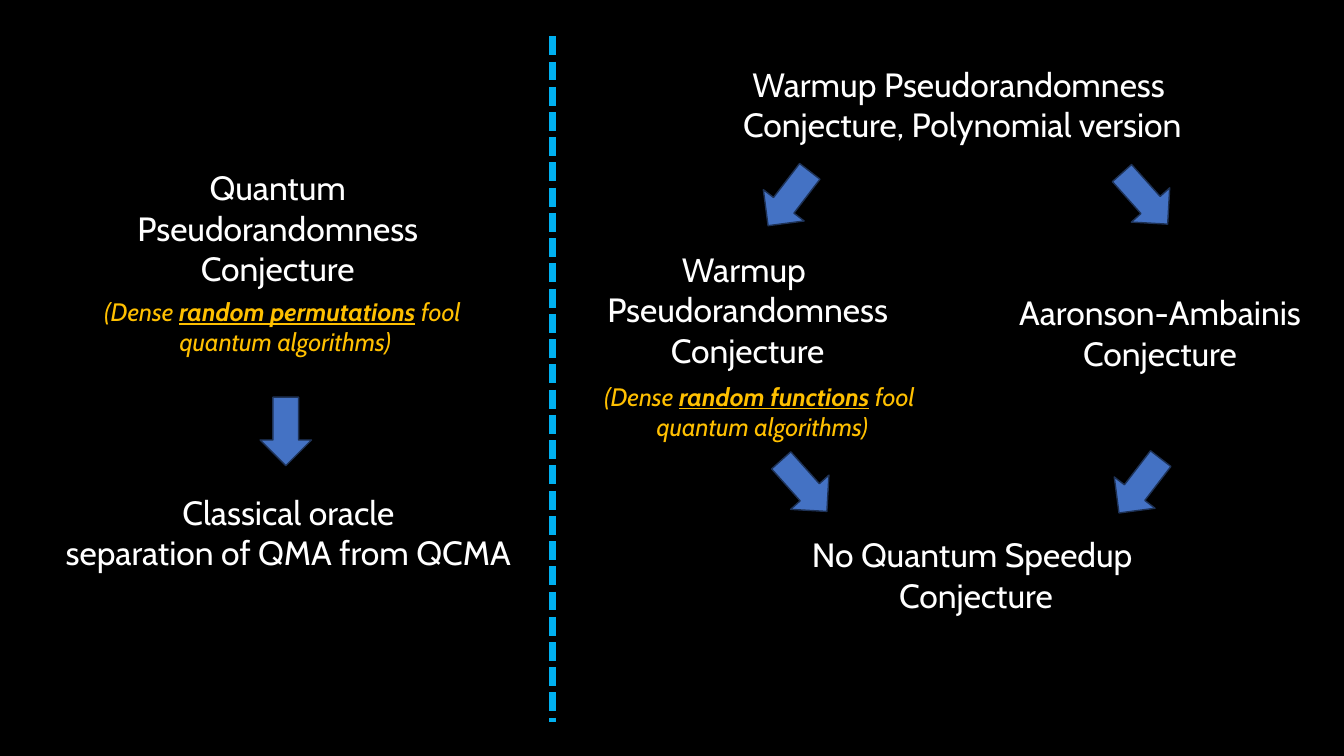
from dataclasses import dataclass

from lxml import etree
from pptx import Presentation
from pptx.dml.color import RGBColor
from pptx.enum.dml import MSO_LINE
from pptx.enum.shapes import MSO_CONNECTOR, MSO_SHAPE
from pptx.enum.text import MSO_AUTO_SIZE, PP_ALIGN
from pptx.oxml.ns import qn
from pptx.slide import Slide
from pptx.util import Emu, Pt

DOWN_ARROW = MSO_SHAPE.DOWN_ARROW
STRAIGHT = MSO_CONNECTOR.STRAIGHT
SQUARE_DOT = MSO_LINE.SQUARE_DOT
CENTER = PP_ALIGN.CENTER
FIT_SHAPE = MSO_AUTO_SIZE.SHAPE_TO_FIT_TEXT

EMU_PER_PX = 9144
BLANK_LAYOUT = 6
FONT = "Cabin"
BLACK, WHITE, GOLD = "000000", "FFFFFF", "FFC000"
BLUE, NAVY, CYAN = "4472C4", "1E3256", "00B0F0"
ARROW_WIDTH, ARROW_HEIGHT = 51, 68
TOWARD_LEFT, TOWARD_RIGHT = 37.5, 318.2


@dataclass(frozen=True)
class Statement:
    left: int
    top: int
    width: int
    height: int
    text: str


@dataclass(frozen=True)
class Remark:
    left: int
    top: int
    subject: str


@dataclass(frozen=True)
class Arrow:
    left: int
    top: int
    rotation: float = 0


STATEMENTS = [
    Statement(706, 525, 524, 91, "No Quantum Speedup \vConjecture"),
    Statement(932, 285, 437, 91, "Aaronson-Ambainis Conjecture"),
    Statement(514, 242, 455, 131, "Warmup \vPseudorandomness Conjecture"),
    Statement(649, 58, 611, 91,
              "Warmup Pseudorandomness \vConjecture, Polynomial version"),
    Statement(48, 161, 455, 131, "Quantum\vPseudorandomness Conjecture"),
    Statement(24, 483, 524, 91,
              "Classical oracle\vseparation of QMA from QCMA"),
]

REMARKS = [
    Remark(21, 289, "random permutations"),
    Remark(494, 373, "random functions"),
]

ARROWS = [
    Arrow(757, 163, TOWARD_LEFT),
    Arrow(1110, 163, TOWARD_RIGHT),
    Arrow(1105, 448, TOWARD_LEFT),
    Arrow(772, 448, TOWARD_RIGHT),
    Arrow(258, 394),
]


def px(length: int) -> Emu:
    return Emu(length * EMU_PER_PX)


def color(value: str) -> RGBColor:
    return RGBColor.from_string(value)


def add_centered_box(page: Slide, left: int, top: int, width: int,
                     height: int, size: int, ink: str):
    box = page.shapes.add_textbox(px(left), px(top), px(width), px(height))
    box.text_frame.word_wrap = True
    box.text_frame.auto_size = FIT_SHAPE
    para = box.text_frame.paragraphs[0]
    para.alignment = CENTER
    para.font.name = FONT
    para.font.size = Pt(size)
    para.font.color.rgb = color(ink)
    return para


def add_statement(page: Slide, item: Statement) -> None:
    para = add_centered_box(page, item.left, item.top, item.width,
                            item.height, 24, WHITE)
    para.text = item.text


def add_remark(page: Slide, item: Remark) -> None:
    para = add_centered_box(page, item.left, item.top, 524, 71, 18, GOLD)
    para.font.italic = True
    para.add_run().text = "(Dense "
    subject = para.add_run()
    subject.text = item.subject
    subject.font.bold = True
    subject.font.underline = True
    para.add_run().text = " fool "
    para.add_line_break()
    para.add_run().text = "quantum algorithms)"


def add_arrow(page: Slide, item: Arrow) -> None:
    arrow = page.shapes.add_shape(DOWN_ARROW, px(item.left), px(item.top),
                                  px(ARROW_WIDTH), px(ARROW_HEIGHT))
    arrow.rotation = item.rotation
    arrow.shadow.inherit = False
    arrow.fill.solid()
    arrow.fill.fore_color.rgb = color(BLUE)
    arrow.line.color.rgb = color(NAVY)
    arrow.line.width = Pt(1)


def add_divider(page: Slide) -> None:
    divider = page.shapes.add_connector(STRAIGHT, px(548), px(36),
                                        px(548), px(716))
    divider.line.color.rgb = color(CYAN)
    divider.line.width = Pt(4.5)
    divider.line.dash_style = SQUARE_DOT
    etree.SubElement(divider._element.spPr, qn("a:effectLst"))


def main() -> None:
    deck = Presentation()
    deck.slide_width, deck.slide_height = px(1333), px(750)
    page = deck.slides.add_slide(deck.slide_layouts[BLANK_LAYOUT])
    page.background.fill.solid()
    page.background.fill.fore_color.rgb = color(BLACK)
    for statement in STATEMENTS:
        add_statement(page, statement)
    for remark in REMARKS:
        add_remark(page, remark)
    for arrow in ARROWS:
        add_arrow(page, arrow)
    add_divider(page)
    deck.save("out.pptx")


if __name__ == "__main__":
    main()
